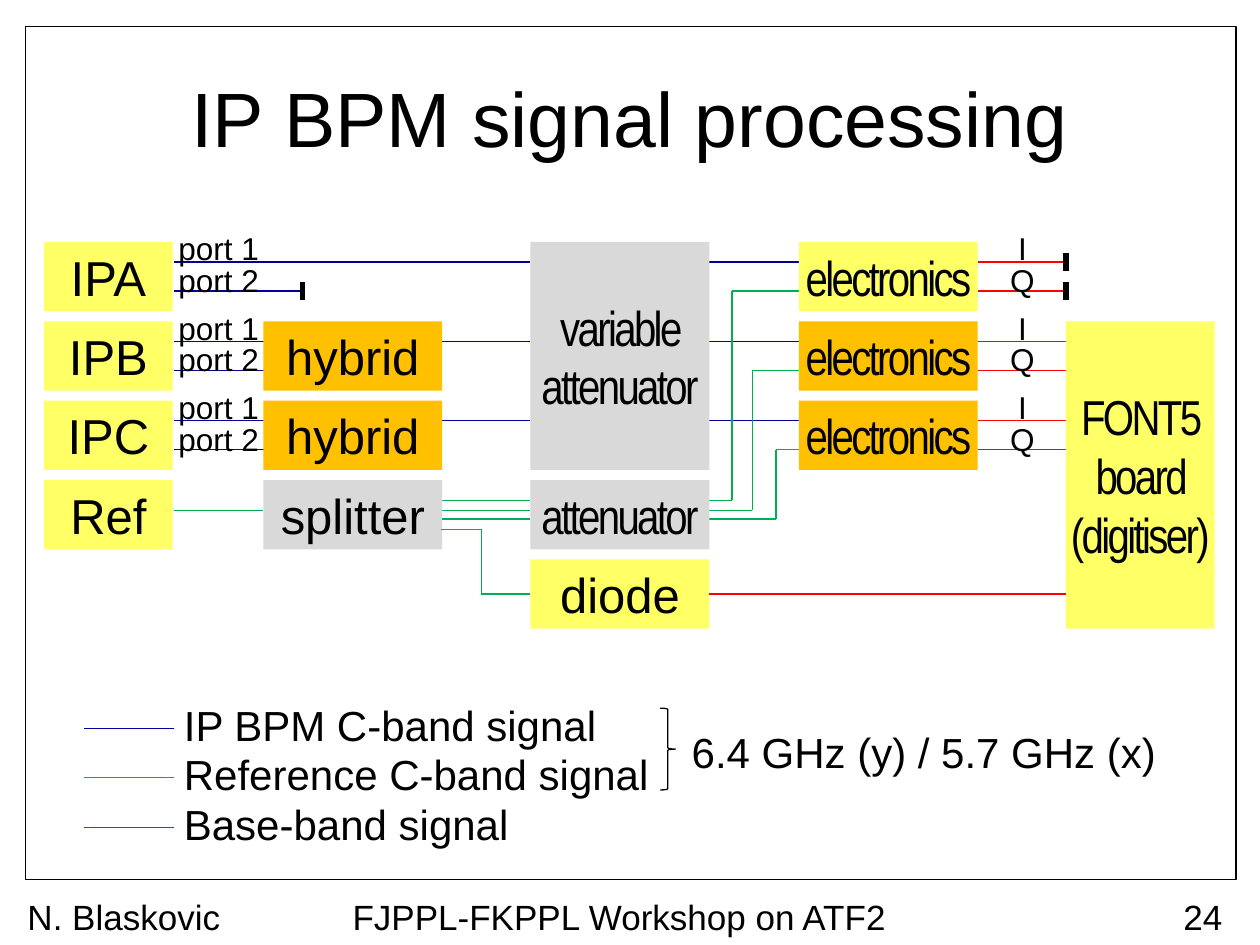
from itertools import pairwise

from lxml.etree import SubElement
from pptx import Presentation
from pptx.dml.color import RGBColor
from pptx.enum.shapes import MSO_CONNECTOR as Connector, MSO_SHAPE as Shape
from pptx.enum.text import MSO_ANCHOR as Anchor, PP_ALIGN as Align
from pptx.oxml.ns import qn
from pptx.util import Inches, Pt

COLOURS = {
    "black": "000000",
    "yellow": "FFFF66",
    "orange": "FFC000",
    "grey": "D9D9D9",
    "bpm": "000099",
    "reference": "00B050",
    "baseband": "FF0000",
}
ROWS = [round(1.92 + 0.63 * index, 2) for index in range(5)]
BOX_HEIGHT = 0.55
BPM_LEFT, BPM_RIGHT = 0.35, 1.38
HYBRID_LEFT, HYBRID_RIGHT = 2.09, 3.5
ATTENUATOR_LEFT, ATTENUATOR_RIGHT = 4.21, 5.63
ELECTRONICS_LEFT, ELECTRONICS_RIGHT = 6.34, 7.76
BOARD_LEFT = 8.46
UPPER, LOWER = 0.16, 0.39
STUB_END = 2.4
WIDE = 1.42


def colour(name):
    return RGBColor.from_string(COLOURS[name])


def write(frame, text, size=28, font="Arial", align=Align.CENTER,
          anchor=Anchor.MIDDLE, side_inset=0, spacing=None):
    frame.word_wrap = True
    frame.vertical_anchor = anchor
    frame.margin_left = frame.margin_right = Inches(side_inset)
    frame.margin_top = frame.margin_bottom = Inches(0.05)
    para = frame.paragraphs[0]
    para.alignment = align
    span = para.add_run()
    span.text = text
    span.font.size = Pt(size)
    span.font.name = font
    span.font.color.rgb = colour("black")
    if spacing is not None:
        span.font._element.set("spc", str(int(spacing * 100)))


def add_text(page, text, left, top, width, height, **style):
    box = page.shapes.add_textbox(
        Inches(left), Inches(top), Inches(width), Inches(height))
    write(box.text_frame, text, **style)


def add_block(page, text, left, top, width, fill, height=BOX_HEIGHT, narrow=False):
    block = page.shapes.add_shape(
        Shape.RECTANGLE, Inches(left), Inches(top), Inches(width), Inches(height))
    block.shadow.inherit = False
    block.fill.solid()
    block.fill.fore_color.rgb = colour(fill)
    block.line.fill.background()
    style = {"font": "Arial Narrow", "spacing": -1.5} if narrow else {}
    write(block.text_frame, text, **style)
    return block


def add_outline(page, kind, left, top, width, height):
    outline = page.shapes.add_shape(
        kind, Inches(left), Inches(top), Inches(width), Inches(height))
    outline.shadow.inherit = False
    outline.fill.background()
    outline.line.color.rgb = colour("black")
    outline.line.width = Pt(0.75)


def add_line(page, start, end, name, width=0.75):
    line = page.shapes.add_connector(
        Connector.STRAIGHT, *(Inches(value) for value in (*start, *end)))
    line.line.color.rgb = colour(name)
    line.line.width = Pt(width)
    SubElement(line._element.spPr, qn("a:effectLst"))
    return line


def add_level(page, left, right, y, name):
    return add_line(page, (left, y), (right, y), name)


def add_route(page, points, name):
    for start, end in pairwise(points):
        add_line(page, start, end, name)


def add_terminator(page, x, y):
    add_line(page, (x, y - 0.07), (x, y + 0.07), "black", width=3)


def add_title_and_footer(page):
    title = page.shapes.title
    title.left, title.top = Inches(0.5), Inches(0.3)
    title.width, title.height = Inches(9), Inches(1.25)
    write(title.text_frame, "IP BPM signal processing", size=44, side_inset=0.1)
    add_outline(page, Shape.RECTANGLE, 0.2, 0.21, 9.61, 6.77)
    for text, left, width, align in (
        ("FJPPL-FKPPL Workshop on ATF2", 1.53, 6.77, Align.CENTER),
        ("24", 9.25, 0.55, Align.RIGHT),
        ("N. Blaskovic", 0.12, 1.73, Align.LEFT),
    ):
        add_text(page, text, left, 7.06, width, 0.32, size=20, align=align,
                 anchor=Anchor.TOP, side_inset=0.1)


def add_wires(page):
    for top in ROWS[:3]:
        add_level(page, BPM_RIGHT, ATTENUATOR_LEFT, top + UPPER, "bpm")
        add_level(page, BPM_RIGHT, STUB_END, top + LOWER, "bpm")
        add_level(page, ATTENUATOR_RIGHT, ELECTRONICS_LEFT, top + UPPER, "bpm")
        for offset in (UPPER, LOWER):
            add_level(page, ELECTRONICS_RIGHT, BOARD_LEFT, top + offset, "baseband")
    add_level(page, BPM_RIGHT, HYBRID_LEFT, 4.05, "reference")
    for top, bend, y in zip(ROWS, (5.81, 5.97, 6.16), (3.97, 4.05, 4.12)):
        add_level(page, HYBRID_RIGHT, ATTENUATOR_LEFT, y, "reference")
        add_route(page, [(ATTENUATOR_RIGHT, y), (bend, y), (bend, top + LOWER),
                         (ELECTRONICS_LEFT, top + LOWER)], "reference")


def add_blocks(page):
    for name, top in zip(("IPA", "IPB", "IPC", "Ref"), ROWS):
        add_block(page, name, BPM_LEFT, top, 1.02, "yellow")
    for top in ROWS[1:3]:
        add_block(page, "hybrid", HYBRID_LEFT, top, WIDE, "orange")
    add_block(page, "splitter", HYBRID_LEFT, ROWS[3], WIDE, "grey")
    for fill, top in zip(("yellow", "orange", "orange"), ROWS):
        add_block(page, "electronics", ELECTRONICS_LEFT, top, WIDE, fill, narrow=True)
    add_block(page, "variable attenuator", ATTENUATOR_LEFT, ROWS[0], WIDE, "grey",
              height=1.81, narrow=True)
    add_block(page, "attenuator", ATTENUATOR_LEFT, ROWS[3], WIDE, "grey", narrow=True)
    add_block(page, "FONT5 board (digitiser)", BOARD_LEFT, ROWS[1], 1.18, "yellow",
              height=2.44, narrow=True)


def add_diode(page):
    diode = add_block(page, "diode", ATTENUATOR_LEFT, ROWS[4], WIDE, "yellow")
    middle = ROWS[4] + BOX_HEIGHT / 2
    bend = 3.82
    add_route(page, [(HYBRID_RIGHT, 4.2), (bend, 4.2), (bend, middle)], "reference")
    feed = add_level(page, bend, ATTENUATOR_LEFT, middle, "reference")
    feed.end_connect(diode, 1)
    output = add_level(page, ATTENUATOR_RIGHT, BOARD_LEFT, middle, "baseband")
    output.begin_connect(diode, 3)


def add_port_labels(page):
    for top in ROWS[:3]:
        for left, names in ((BPM_RIGHT, ("port 1", "port 2")),
                            (ELECTRONICS_RIGHT, ("I", "Q"))):
            for name, offset in zip(names, (-0.08, 0.17)):
                add_text(page, name, left, top + offset, 0.71, 0.26, size=18)
    for x, offset in ((BOARD_LEFT, UPPER), (BOARD_LEFT, LOWER), (STUB_END, LOWER)):
        add_terminator(page, x, ROWS[0] + offset)


def add_legend(page):
    for text, name, y in (
        ("IP BPM C-band signal", "bpm", 5.78),
        ("Reference C-band signal", "reference", 6.17),
        ("Base-band signal", "baseband", 6.57),
    ):
        add_level(page, 0.67, BPM_RIGHT, y, name)
        add_text(page, text, 1.46, y - 0.16, 3.84, 0.26, size=24, align=Align.LEFT)
    add_outline(page, Shape.RIGHT_BRACE, 5.24, 5.62, 0.12, 0.65)
    add_text(page, "6.4 GHz (y) / 5.7 GHz (x)", 5.49, 5.84, 3.84, 0.26,
             size=24, align=Align.LEFT)


def main():
    deck = Presentation()
    deck.slide_width, deck.slide_height = Inches(10), Inches(7.5)
    page = deck.slides.add_slide(deck.slide_layouts[5])
    add_title_and_footer(page)
    add_wires(page)
    add_blocks(page)
    add_diode(page)
    add_port_labels(page)
    add_legend(page)
    deck.save("out.pptx")


if __name__ == "__main__":
    main()
